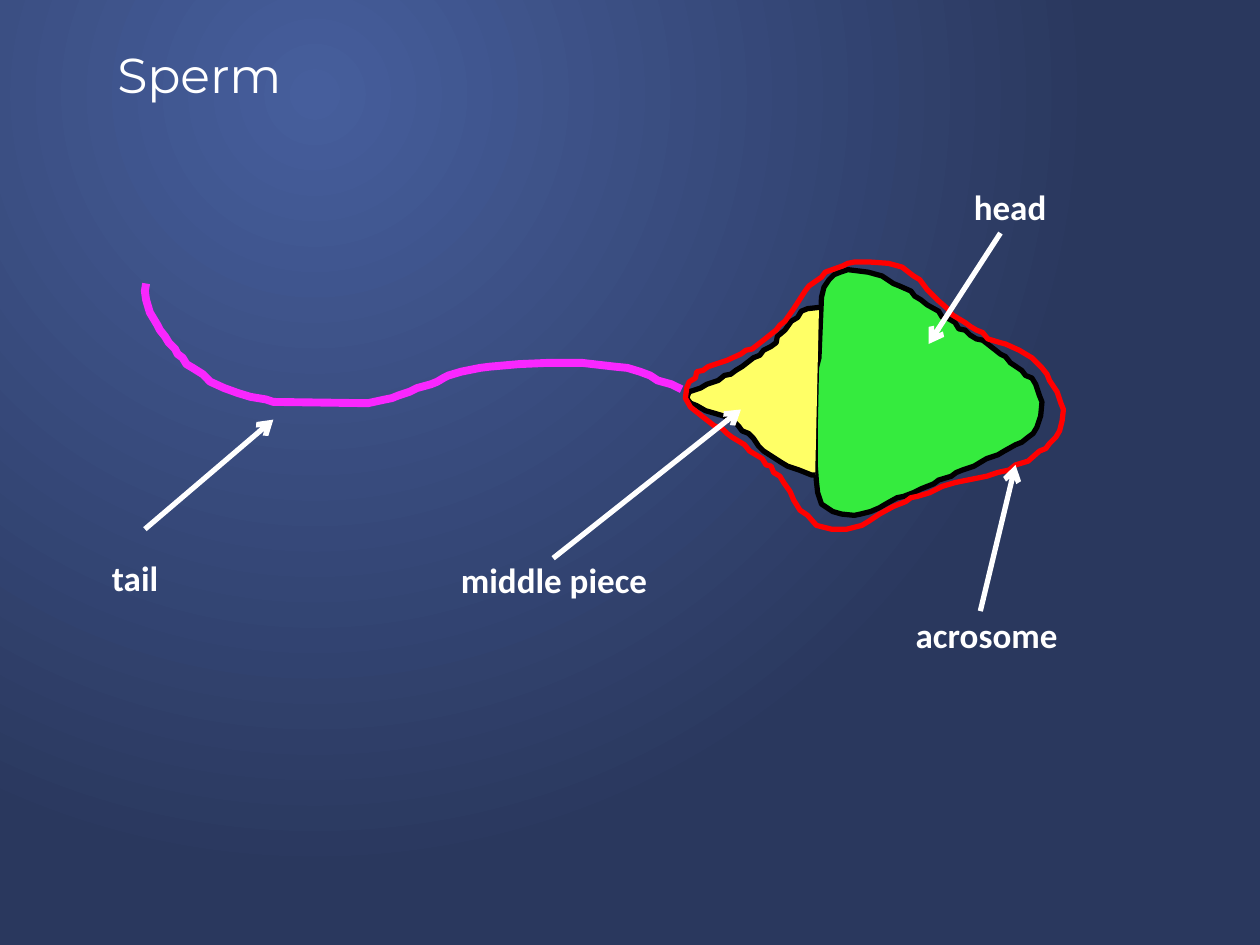
from lxml import etree
from pptx import Presentation
from pptx.dml.color import RGBColor
from pptx.enum.shapes import MSO_CONNECTOR
from pptx.enum.text import MSO_ANCHOR, MSO_AUTO_SIZE, PP_ALIGN
from pptx.oxml.ns import qn
from pptx.util import Pt

STRAIGHT = MSO_CONNECTOR.STRAIGHT
MIDDLE = MSO_ANCHOR.MIDDLE
GROW = MSO_AUTO_SIZE.SHAPE_TO_FIT_TEXT
LEFT = PP_ALIGN.LEFT

THEME = {
    "glow": "465E9C", "night": "2A385E", "white": "FFFFFF", "black": "000000",
    "green": "35EB3E", "yellow": "FFFF66", "magenta": "F927FE", "red": "FF0000",
    "title": {"name": "Montserrat", "size": Pt(28), "bold": False},
    "label": {"name": "Calibri", "size": Pt(20), "bold": True},
    "arrow_width": 3,
}
GLOW_CENTRE = {"l": "50000", "t": "20000", "r": "100000", "b": "100000"}

TITLE = ("Sperm", (59.8, 18, 491.8, 48.2))
LABEL_HEIGHT = 31.7
LABELS = [
    ("head", (549.4, 102.2), 116, (571.7, 133.2), (530.6, 196.6)),
    ("tail", (56.9, 314.6), 126.7, (82.8, 302.4), (156.2, 239.8)),
    ("acrosome", (516.2, 347), 111.6, (560.2, 349.2), (580.3, 265.7)),
    ("middle piece", (256.3, 315.4), 131.8, (316.1, 319), (423.4, 234)),
]

GRID = Pt(0.72)
HEAD = [
    (648, 292), (650, 284), (651, 260), (652, 236), (654, 228), (658, 222),
    (662, 218), (667, 216), (673, 214), (681, 215), (689, 216), (700, 219),
    (709, 225), (714, 227), (723, 231), (726, 235), (731, 238), (736, 242),
    (745, 247), (748, 252), (753, 253), (758, 256), (761, 261), (766, 262),
    (770, 266), (775, 269), (780, 270), (789, 277), (794, 281), (798, 283),
    (802, 288), (811, 294), (814, 298), (819, 300), (822, 305), (825, 314),
    (827, 319), (826, 330), (823, 339), (820, 344), (816, 347), (811, 351),
    (806, 353), (797, 358), (792, 361), (783, 364), (773, 370), (764, 373),
    (759, 375), (755, 378), (745, 381), (741, 384), (731, 388), (725, 391),
    (717, 394), (712, 395), (703, 400), (698, 403), (691, 406), (683, 408),
    (678, 409), (668, 408), (661, 406), (652, 400), (649, 391), (648, 382),
    (647, 369), (647, 340),
]
MIDDLE_PIECE = [
    (650, 244), (641, 245), (636, 247), (633, 252), (628, 255), (623, 262),
    (617, 267), (616, 272), (612, 275), (606, 278), (603, 282), (598, 284),
    (589, 291), (584, 294), (580, 297), (575, 298), (570, 302), (561, 305),
    (556, 308), (547, 311), (545, 316), (548, 320), (553, 322), (560, 326),
    (567, 328), (577, 331), (582, 334), (586, 338), (589, 342), (594, 344),
    (598, 348), (602, 354), (606, 358), (620, 367), (625, 370), (634, 373),
    (639, 375), (644, 377), (647, 377),
]
TAIL = [
    (541, 309), (533, 305), (522, 302), (516, 298), (508, 295), (498, 292),
    (488, 291), (462, 288), (435, 288), (412, 289), (389, 291), (381, 292),
    (366, 295), (356, 298), (352, 300), (347, 303), (342, 305), (331, 308),
    (325, 311), (316, 314), (311, 316), (306, 317), (292, 320), (217, 319),
    (211, 317), (199, 315), (189, 312), (178, 308), (167, 303), (161, 297),
    (153, 292), (148, 289), (145, 284), (141, 281), (139, 277), (134, 272),
    (131, 267), (127, 262), (125, 258), (119, 248), (116, 238), (115, 231),
    (116, 225),
]
ACROSOME = [
    (544, 316), (545, 308), (547, 303), (552, 300), (553, 295), (558, 294),
    (562, 291), (577, 286), (588, 281), (592, 278), (597, 277), (606, 270),
    (616, 262), (619, 258), (623, 255), (630, 245), (639, 231), (642, 227),
    (652, 220), (655, 216), (669, 211), (673, 209), (678, 208), (691, 208),
    (705, 209), (716, 212), (725, 219), (730, 222), (736, 230), (744, 238),
    (752, 245), (756, 250), (766, 256), (770, 259), (775, 262), (780, 264),
    (784, 269), (794, 272), (798, 273), (809, 278), (819, 284), (823, 288),
    (827, 292), (831, 297), (833, 302), (839, 311), (842, 320), (844, 325),
    (843, 334), (841, 342), (838, 347), (833, 352), (830, 356), (825, 358),
    (816, 366), (806, 369), (801, 373), (792, 375), (783, 378), (773, 380),
    (758, 383), (748, 386), (738, 391), (728, 394), (723, 395), (719, 398),
    (709, 402), (698, 408), (689, 414), (684, 417), (672, 420), (660, 420),
    (648, 417), (641, 409), (635, 405), (630, 397), (627, 390), (622, 383),
    (619, 378), (614, 375), (612, 370), (608, 369), (605, 364), (595, 358),
    (591, 353), (581, 347), (577, 344), (573, 340), (567, 338), (558, 331),
    (553, 327), (548, 323),
]
PARTS = [
    (HEAD, True, "green", "black", 3),
    (MIDDLE_PIECE, False, "yellow", "black", 3),
    (TAIL, False, None, "magenta", 4.5),
    (ACROSOME, True, None, "red", 3),
]


def color(key):
    return RGBColor.from_string(THEME[key])


def paint_background(slide):
    fill = slide.background.fill
    fill.gradient()
    for stop, key, position in zip(fill.gradient_stops, ("glow", "night"), (0, 1)):
        stop.color.rgb = color(key)
        stop.position = position
    gradient = slide.element.find(".//" + qn("a:gradFill"))
    gradient.remove(gradient.find(qn("a:lin")))
    circle = etree.SubElement(gradient, qn("a:path"), {"path": "circle"})
    etree.SubElement(circle, qn("a:fillToRect"), GLOW_CENTRE)


def write(frame, text, style):
    frame.text = text
    paragraph = frame.paragraphs[0]
    paragraph.alignment = LEFT
    for attribute, value in THEME[style].items():
        setattr(paragraph.font, attribute, value)
    paragraph.font.color.rgb = color("white")


def stroke(line, key, width):
    line.color.rgb = color(key)
    line.width = Pt(width)


def add_title(slide):
    text, box = TITLE
    title = slide.shapes.title
    title.left, title.top, title.width, title.height = map(Pt, box)
    title.text_frame.vertical_anchor = MIDDLE
    write(title.text_frame, text, "title")


def add_part(slide, outline, closed, fill, edge, width):
    builder = slide.shapes.build_freeform(*outline[0], scale=GRID)
    builder.add_line_segments(outline[1:], close=closed)
    part = builder.convert_to_shape()
    part.shadow.inherit = False
    if fill:
        part.fill.solid()
        part.fill.fore_color.rgb = color(fill)
    else:
        part.fill.background()
    stroke(part.line, edge, width)


def add_label(slide, text, corner, width):
    label = slide.shapes.add_textbox(*map(Pt, (*corner, width, LABEL_HEIGHT)))
    label.text_frame.word_wrap = True
    label.text_frame.auto_size = GROW
    write(label.text_frame, text, "label")


def add_arrow(slide, start, end):
    arrow = slide.shapes.add_connector(STRAIGHT, *map(Pt, (*start, *end)))
    stroke(arrow.line, "white", THEME["arrow_width"])
    properties = arrow.element.spPr
    etree.SubElement(properties.find(qn("a:ln")), qn("a:tailEnd"), {"type": "arrow"})
    etree.SubElement(properties, qn("a:effectLst"))


def main():
    deck = Presentation()
    deck.slide_width, deck.slide_height = Pt(720), Pt(540)
    slide = deck.slides.add_slide(deck.slide_layouts[5])
    paint_background(slide)
    add_title(slide)
    for part in PARTS:
        add_part(slide, *part)
    for text, corner, width, start, end in LABELS:
        add_label(slide, text, corner, width)
        add_arrow(slide, start, end)
    deck.save("out.pptx")


if __name__ == "__main__":
    main()
